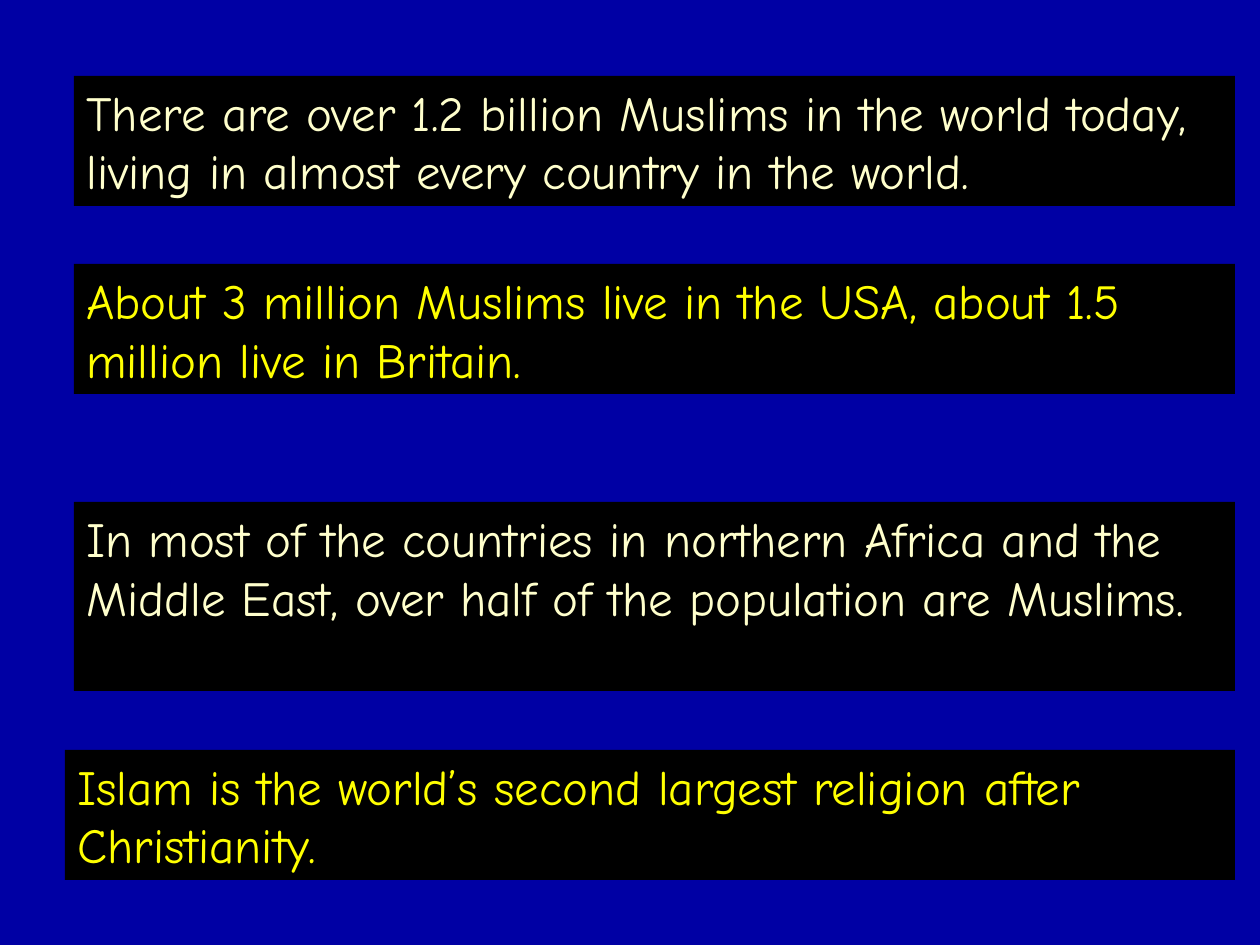
from pptx import Presentation
from pptx.dml.color import RGBColor
from pptx.enum.text import MSO_ANCHOR, PP_ALIGN
from pptx.util import Pt

TOP = MSO_ANCHOR.TOP
LEFT = PP_ALIGN.LEFT
SCALE = 914400 / 126  # EMU per px
WIDE, HIGH = 1260, 945
EDGE = 1235  # shared right edge of the panels
BLANK = 6
COLORS = {"back": "0000A4", "panel": "000000", "cream": "FFFFCC", "yellow": "FFFF00"}

# left, top, height, color, text
FACTS = [
    (74, 76, 130, "cream",
     "There are over 1.2 billion Muslims in the world today, "
     "living in almost every country in the world."),
    (74, 264, 130, "yellow",
     "About 3 million Muslims live in the USA, about 1.5 million live in Britain."),
    (74, 502, 189, "cream",
     "In most of the countries in northern Africa and the Middle East, "
     "over half of the population are Muslims."),
    (65, 750, 130, "yellow",
     "Islam is the world’s second largest religion after Christianity."),
]


def emu(px):
    return round(px * SCALE)


def paint(fill, name):
    fill.solid()
    fill.fore_color.rgb = RGBColor.from_string(COLORS[name])


def write(frame, text, color="cream", size=28, face="Comic Neue", align=LEFT):
    para = frame.paragraphs[0]
    para.alignment = align
    run = para.add_run()
    run.text = text
    run.font.name = face
    run.font.size = Pt(size)
    run.font.color.rgb = RGBColor.from_string(COLORS[color])


class Deck:
    """Holds the panel style and the current slide."""

    def __init__(self, slide, fill="panel"):
        self.slide = slide
        self.fill = fill

    def back(self, name):
        paint(self.slide.background.fill, name)

    def panel(self, left, top, high, color, text):
        box = self.slide.shapes.add_textbox(
            emu(left), emu(top), emu(EDGE - left), emu(high))
        paint(box.fill, self.fill)
        frame = box.text_frame
        frame.word_wrap = True
        frame.vertical_anchor = TOP
        write(frame, text, color=color)


def main():
    prs = Presentation()
    prs.slide_width, prs.slide_height = emu(WIDE), emu(HIGH)
    deck = Deck(prs.slides.add_slide(prs.slide_layouts[BLANK]))

    # Background
    deck.back("back")

    # Fact panels
    for fact in FACTS:
        deck.panel(*fact)

    prs.save("out.pptx")


if __name__ == "__main__":
    main()
